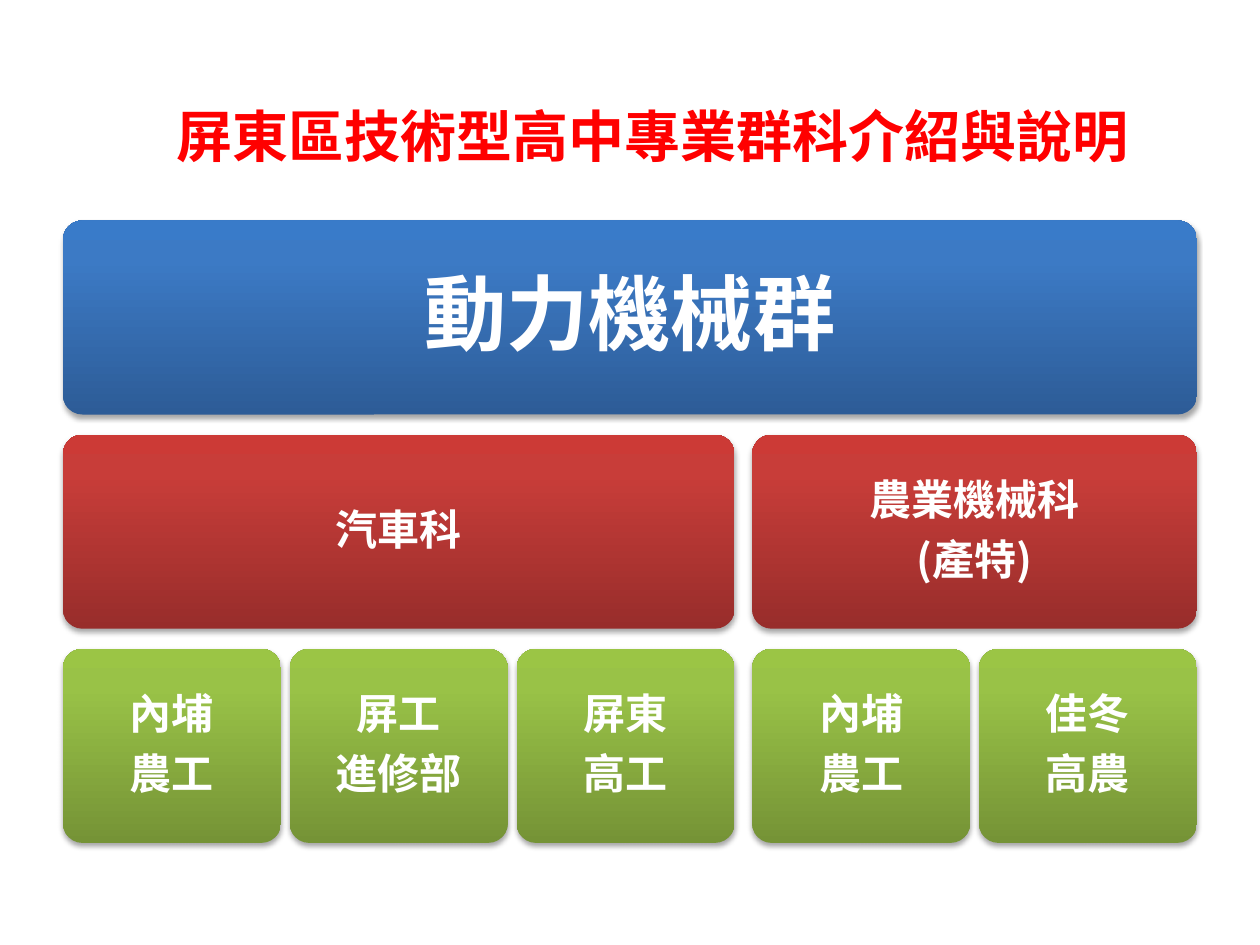
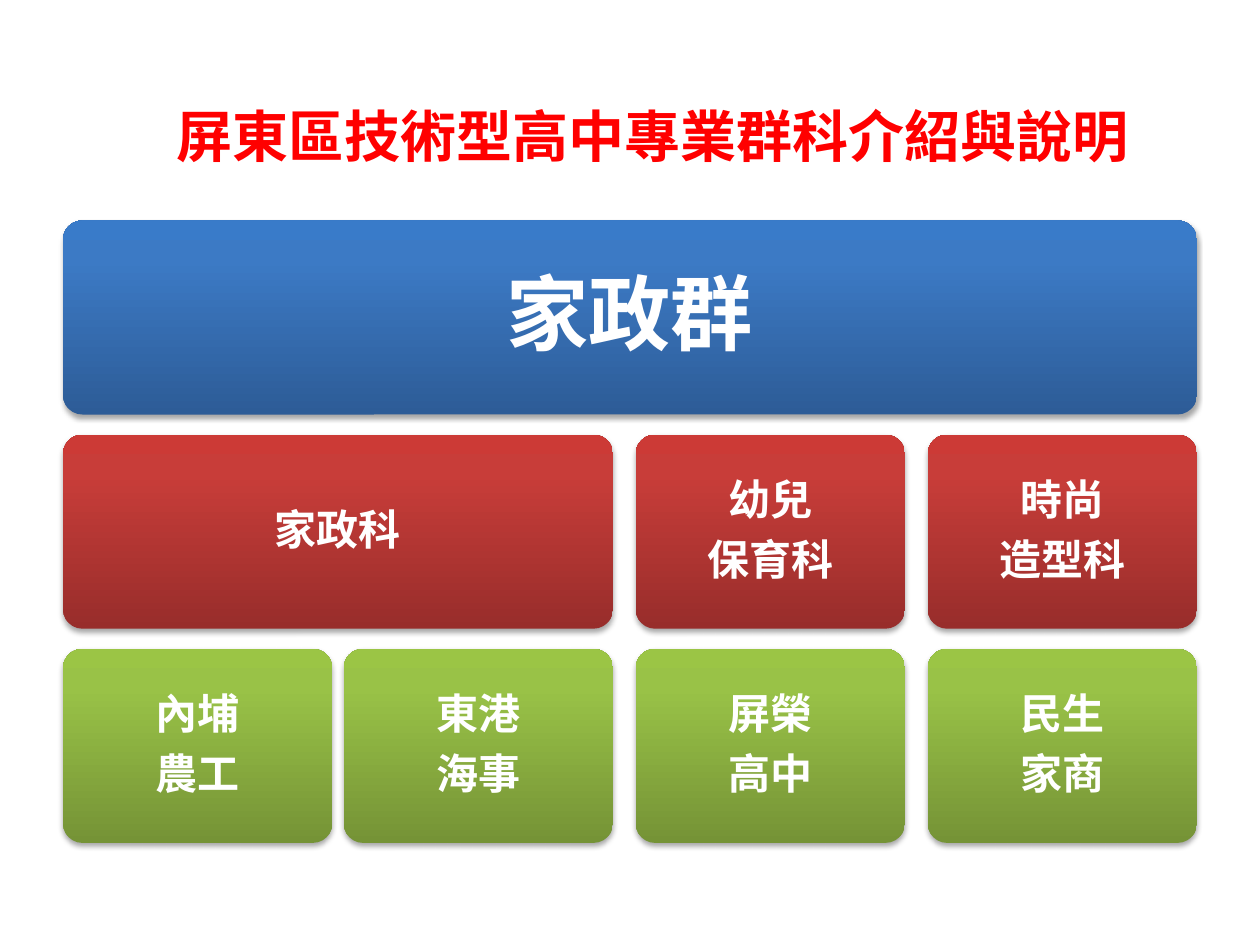
from copy import deepcopy

from lxml.etree import SubElement
from pptx import Presentation
from pptx.dml.color import RGBColor
from pptx.enum.shapes import MSO_SHAPE
from pptx.enum.text import MSO_ANCHOR, MSO_AUTO_SIZE, PP_ALIGN
from pptx.oxml.ns import qn
from pptx.util import Pt

PX = 9144
FONT = "Noto Sans CJK TC"
TITLE = "屏東區技術型高中專業群科介紹與說明"
RED = RGBColor(0xFF, 0x00, 0x00)
WHITE = RGBColor(0xFF, 0xFF, 0xFF)
BLACK = RGBColor(0x00, 0x00, 0x00)
BLUES = (RGBColor(0x2D, 0x5C, 0x97), RGBColor(0x3C, 0x7A, 0xC5), RGBColor(0x39, 0x7B, 0xC9))
REDS = (RGBColor(0x98, 0x2D, 0x2B), RGBColor(0xC8, 0x3D, 0x39), RGBColor(0xCC, 0x3A, 0x36))
GREENS = (RGBColor(0x75, 0x93, 0x36), RGBColor(0x99, 0xC2, 0x47), RGBColor(0x9B, 0xC5, 0x45))
STOPS = (0, 0.8, 1)
SHADOW = {"blurRad": "40000", "dist": "23000", "dir": "5400000", "rotWithShape": "0"}
HEAD = (130, 76, 937, 64)
CHART = (50, 175, 900, 494)
ROW, STEP = 154, 170

SLIDES = [
    ("動力機械群", 7, [
        ("汽車科", ["內埔\n農工", "屏工\n進修部", "屏東\n高工"]),
        ("農業機械科\n(產特)", ["內埔\n農工", "佳冬\n高農"]),
    ]),
    ("家政群", 9, [
        ("家政科", ["內埔\n農工", "東港\n海事"]),
        ("幼兒\n保育科", ["屏榮\n高中"]),
        ("時尚\n造型科", ["民生\n家商"]),
    ]),
]


def scale(box):
    """Turn a px box into EMU."""
    return [round(v * PX) for v in box]


def style(item, values):
    """Set each attribute named in a dict."""
    for name, value in values.items():
        setattr(item, name, value)


def write(para, text, size, color):
    """Add one bold run to a paragraph."""
    run = para.add_run()
    run.text = text
    style(run.font, {"size": Pt(size), "bold": True, "name": FONT})
    run.font.color.rgb = color
    SubElement(run._r.get_or_add_rPr(), qn("a:ea"), typeface=FONT)


def paint(shape, tints):
    """Give a shape its gradient and soft shadow."""
    shape.line.fill.background()
    shape.fill.gradient()
    shape.fill.gradient_angle = 90
    stops = shape._element.spPr.find(".//" + qn("a:gsLst"))
    stops.append(deepcopy(stops[-1]))
    for stop, place, tint in zip(shape.fill.gradient_stops, STOPS, tints):
        stop.position = place
        stop.color.rgb = tint
    shape.shadow.inherit = False
    glow = SubElement(shape._element.spPr.find(qn("a:effectLst")), qn("a:outerShdw"), SHADOW)
    shade = SubElement(glow, qn("a:srgbClr"), val=str(BLACK))
    SubElement(shade, qn("a:alpha"), val="35000")


def card(slide, box, text, tints, size=24, inset=15):
    """Draw a rounded card with centred lines."""
    shape = slide.shapes.add_shape(MSO_SHAPE.ROUNDED_RECTANGLE, *scale(box))
    shape.adjustments[0] = 0.1
    paint(shape, tints)
    frame = shape.text_frame
    pad = inset * PX
    style(frame, {"word_wrap": True, "vertical_anchor": MSO_ANCHOR.MIDDLE,
                  "margin_left": pad, "margin_right": pad,
                  "margin_top": pad, "margin_bottom": pad})
    for i, line in enumerate(text.split("\n")):
        para = frame.add_paragraph() if i else frame.paragraphs[0]
        style(para, {"alignment": PP_ALIGN.CENTER, "line_spacing": 0.9})
        if i:
            para.space_before = Pt(8.4)
        write(para, line, size, WHITE)


def title(slide, box):
    """Write the shared red title."""
    frame = slide.shapes.add_textbox(*scale(box)).text_frame
    style(frame, {"word_wrap": True, "auto_size": MSO_AUTO_SIZE.SHAPE_TO_FIT_TEXT})
    write(frame.paragraphs[0], TITLE, 32, RED)


def tree(slide, box, group, gap, depts):
    """Stack the group, its departments and their schools."""
    left, top, width, _ = box
    card(slide, (left, top, width, ROW), group, BLUES, 47, 25)
    count = sum(len(schools) for _, schools in depts)
    gaps = count - 1 + len(depts) - 1
    leaf = (width - gap * gaps) / count
    for dept, schools in depts:
        span = len(schools) * (leaf + gap) - gap
        card(slide, (left, top + STEP, span, ROW), dept, REDS)
        for i, school in enumerate(schools):
            spot = left + i * (leaf + gap)
            card(slide, (spot, top + 2 * STEP, leaf, ROW), school, GREENS)
        left += span + 2 * gap


def main():
    """Build and save the deck."""
    deck = Presentation()
    style(deck, {"slide_width": 1000 * PX, "slide_height": 750 * PX})
    for group, gap, depts in SLIDES:
        slide = deck.slides.add_slide(deck.slide_layouts[6])
        title(slide, HEAD)
        tree(slide, CHART, group, gap, depts)
    deck.save("out.pptx")


if __name__ == "__main__":
    main()
